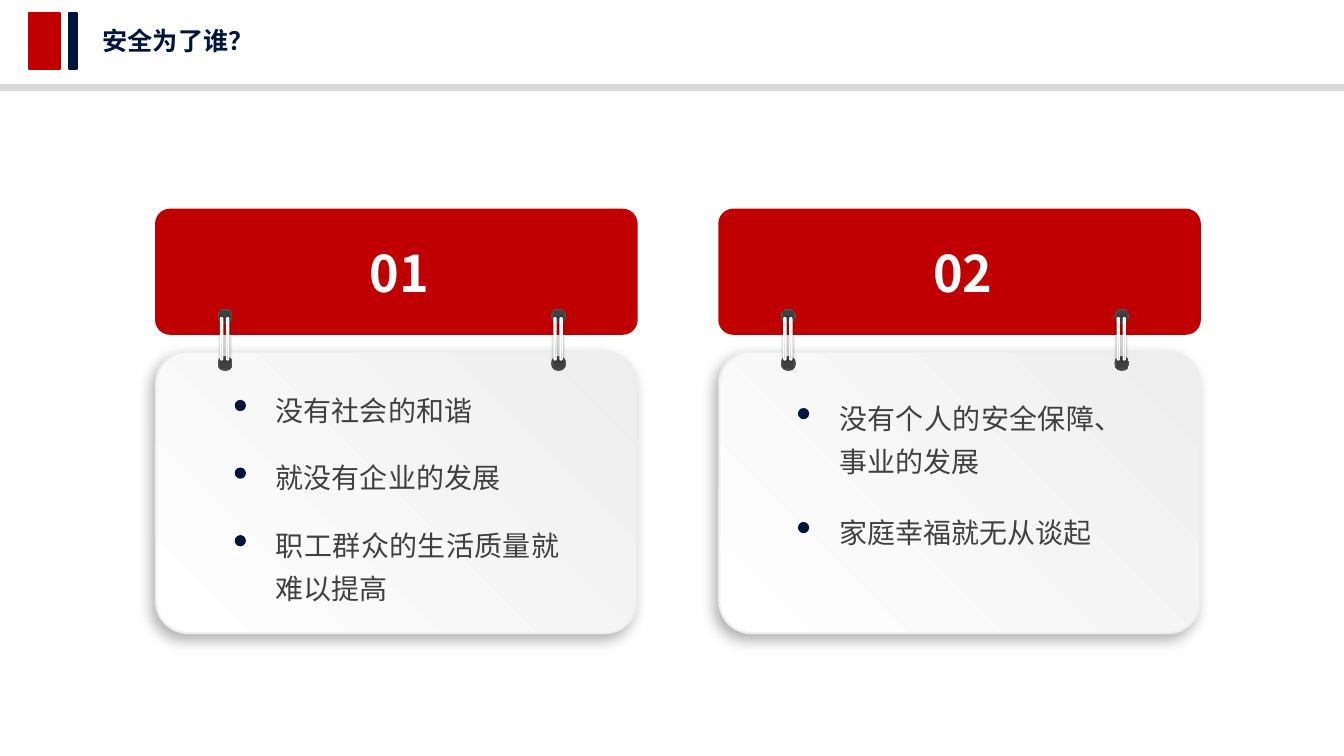
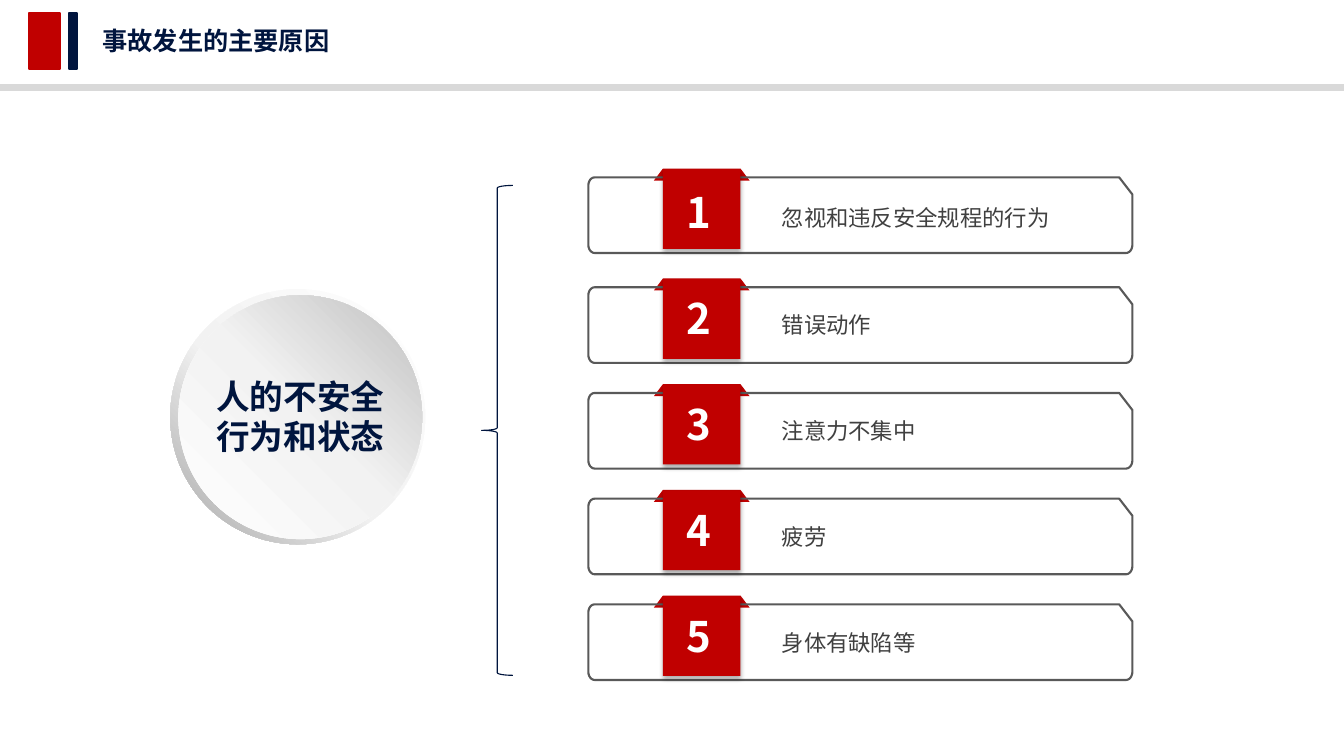
"""Build two safety training slides."""
import math

from pptx import Presentation
from pptx import util as u
from pptx.dml.color import RGBColor
from pptx.enum import shapes, text
from pptx.oxml import parse_xml
from pptx.oxml.ns import nsdecls, qn

RED = RGBColor(0xC0, 0x00, 0x00)
NAVY = RGBColor(0x00, 0x15, 0x3E)
WHITE = RGBColor(0xFF, 0xFF, 0xFF)
BAND = RGBColor(0xD9, 0xD9, 0xD9)
PALE = RGBColor(0xEE, 0xEE, 0xEE)
MIST = RGBColor(0xF2, 0xF2, 0xF2)
SILVER = RGBColor(0xBF, 0xBF, 0xBF)
STEEL = RGBColor(0xA6, 0xA6, 0xA6)
GREY = RGBColor(0x80, 0x80, 0x80)
OUTLINE = RGBColor(0x59, 0x59, 0x59)
INK = RGBColor(0x40, 0x40, 0x40)
FONT = "Noto Sans CJK SC"
WIDTH, HEIGHT = 960.5, 540

KIND = shapes.MSO_SHAPE
ALIGN = text.PP_ALIGN
PANEL_FILL = ([(0, PALE), (100, WHITE)], 135)
HOLE_FILL = ([(59, INK), (100, OUTLINE)], None)
ROD_FILL = ([(0, GREY), (23, STEEL), (52, BAND), (74, WHITE), (100, STEEL)], 270)
RIM_FILL = ([(0, WHITE), (55, MIST), (100, STEEL)], 135)
DISC_FILL = ([(0, WHITE), (51, MIST), (100, SILVER)], 315)
PANEL_SHADOW = (30, 10, 5, 135)
ROD_SHADOW = (40, 2, 0, 0)
TAG_SHADOW = (32, 3.5, 2.2, 90)

TITLE = {"size": u.Pt(18), "bold": True}
CARD_NUMBER = {"size": u.Pt(36), "bold": True}
CARD_ITEM = {"size": u.Pt(20)}
ROW_NUMBER = {"size": u.Pt(30), "bold": True}
ROW_LABEL = {"size": u.Pt(16)}
TOPIC = {"size": u.Pt(24), "bold": True}
DEFAULT_INSETS = (7.2, 3.6)
ROW_INSETS = (5, 2.9)

CARDS = [
    ("01", 111.6, 120.2, 9.4,
     [("没有社会的和谐", 1), ("就没有企业的发展", 1), ("职工群众的生活质量就难以提高", 2)]),
    ("02", 514.1, 126, 10.8,
     [("没有个人的安全保障、事业的发展", 2), ("家庭幸福就无从谈起", 1)]),
]
CAUSES = ["忽视和违反安全规程的行为", "错误动作", "注意力不集中", "疲劳", "身体有缺陷等"]


def set_values(target, values):
    """Set each named attribute of the target."""
    for name, value in values.items():
        setattr(target, name, value)


def gradient(shape, stops, angle):
    """Fill a shape with a linear gradient, or one that follows its outline."""
    marks = "".join(
        f'<a:gs pos="{at * 1000}"><a:srgbClr val="{color}"/></a:gs>' for at, color in stops)
    if angle is None:
        course = ('<a:path path="shape"><a:fillToRect l="50000" t="50000" '
                  'r="50000" b="50000"/></a:path>')
    else:
        course = f'<a:lin ang="{angle * 60000}" scaled="0"/>'
    shape.fill.background()
    properties = shape._element.spPr
    properties.replace(properties.find(qn("a:noFill")), parse_xml(
        f'<a:gradFill {nsdecls("a")} rotWithShape="1">'
        f'<a:gsLst>{marks}</a:gsLst>{course}</a:gradFill>'))


def drop_shadow(shape, opacity, blur, distance, angle):
    """Give a shape a black outer shadow."""
    shape._element.spPr.find(qn("a:effectLst")).append(parse_xml(
        f'<a:outerShdw {nsdecls("a")} blurRad="{u.Pt(blur)}" dist="{u.Pt(distance)}" '
        f'dir="{angle * 60000}" algn="ctr" rotWithShape="0"><a:srgbClr val="000000">'
        f'<a:alpha val="{opacity * 1000}"/></a:srgbClr></a:outerShdw>'))


def paint(shape, fill=None, line=None, weight=1.5, shadow=None):
    """Set the fill, line and shadow of a shape."""
    shape.shadow.inherit = False
    if fill is None:
        shape.fill.background()
    elif isinstance(fill, RGBColor):
        shape.fill.solid()
        shape.fill.fore_color.rgb = fill
    else:
        gradient(shape, *fill)
    if line is None:
        shape.line.fill.background()
    else:
        shape.line.color.rgb = line
        shape.line.width = u.Pt(weight)
    if shadow:
        drop_shadow(shape, *shadow)


def add_preset(slide, kind, box, adjust=None, **look):
    """Add a painted preset shape in a box given in points."""
    shape = slide.shapes.add_shape(kind, *map(u.Pt, box))
    if adjust is not None:
        shape.adjustments[0] = adjust
    paint(shape, **look)


def add_outline(slide, points, **look):
    """Add a painted closed outline through points."""
    corners = [(u.Pt(x), u.Pt(y)) for x, y in points]
    builder = slide.shapes.build_freeform(*corners[0])
    builder.add_line_segments(corners[1:], close=True)
    paint(builder.convert_to_shape(), **look)


def add_text(slide, box, lines, style, color, insets=DEFAULT_INSETS,
             anchor=text.MSO_ANCHOR.TOP, **layout):
    """Add a wrapped text box with one paragraph per line."""
    frame = slide.shapes.add_textbox(*map(u.Pt, box)).text_frame
    across, down = map(u.Pt, insets)
    set_values(frame, {
        "word_wrap": True, "vertical_anchor": anchor,
        "margin_left": across, "margin_right": across,
        "margin_top": down, "margin_bottom": down})
    for index, line in enumerate(lines):
        paragraph = frame.add_paragraph() if index else frame.paragraphs[0]
        set_values(paragraph, layout)
        run = paragraph.add_run()
        run.text = line
        set_values(run.font, {"name": FONT, **style})
        run.font.color.rgb = color
        run._r.get_or_add_rPr().append(
            parse_xml(f'<a:ea {nsdecls("a")} typeface="{FONT}"/>'))


def titled_slide(deck, title):
    """Add a blank slide with the shared title, blocks and band."""
    slide = deck.slides.add_slide(deck.slide_layouts[6])
    for left, width, color in ((20.9, 22.3, RED), (49, 5.8, NAVY)):
        add_preset(slide, KIND.RECTANGLE, (left, 9.4, width, 39.6), fill=color, line=color)
    add_text(slide, (66.2, 14.4, 600, 28.8), [title], TITLE, NAVY)
    add_preset(slide, KIND.RECTANGLE, (0, 60.5, WIDTH, 3.6), fill=BAND, line=BAND)
    return slide


def binder_ring(slide, left, top):
    """Draw two holes joined by two metal rods."""
    for drop in (33.8, 0):
        add_preset(slide, KIND.OVAL, (left, top + drop, 10.8, 10.8), fill=HOLE_FILL)
    for shift in (6.5, 2.2):
        add_preset(slide, KIND.ROUNDED_RECTANGLE, (left + shift, top + 6.5, 1.4, 30.2), 0.5,
                   fill=ROD_FILL, line=WHITE, weight=1, shadow=ROD_SHADOW)


def card(slide, left, top, number, first, gap, items):
    """Draw a numbered header hung over a panel of bulleted items."""
    add_preset(slide, KIND.ROUNDED_RECTANGLE, (left, top, 343.4, 88.6), 0.113,
               fill=RED, line=RED)
    add_preset(slide, KIND.ROUNDED_RECTANGLE, (left, top + 101.5, 343.4, 200.9), 0.113,
               fill=PANEL_FILL, line=PALE, shadow=PANEL_SHADOW)
    for shift in (43.9, 282.2):
        binder_ring(slide, left + shift, top + 70.6)
    add_text(slide, (left + 141.8, top + 19.4, 60.5, 51.1), [number], CARD_NUMBER, WHITE,
             anchor=text.MSO_ANCHOR.MIDDLE, alignment=ALIGN.RIGHT)
    item_top = top + first
    for item, line_count in items:
        height = 7.2 + 31.7 * line_count
        add_text(slide, (left + 78.5, item_top, 216.7, height), [item], CARD_ITEM, INK,
                 alignment=ALIGN.JUSTIFY, line_spacing=1.3)
        add_preset(slide, KIND.OVAL, (left + 56.9, item_top + 16.4, 6.5, 6.5),
                   fill=NAVY, line=NAVY)
        item_top += height + gap


def arc(x, y, start):
    """Return points of a clockwise quarter arc around a corner centre."""
    angles = [math.radians(start + 15 * step) for step in range(7)]
    return [(x + 4.5 * math.cos(a), y + 5.8 * math.sin(a)) for a in angles]


def cause_row(slide, left, top, text_top, number, label):
    """Draw a clipped frame with a numbered ribbon tag and a label."""
    right, bottom = left + 388.8, top + 54
    flap, flap_top = left + 46.8, top - 6.3
    add_outline(slide, [(flap + 6.5, flap_top), (flap + 61.9, flap_top),
                        (flap + 68.4, flap_top + 8.6), (flap, flap_top + 8.6)], fill=RED)
    add_outline(slide, [(right - 9.4, top), (right, top + 12.2),
                        *arc(right - 4.5, bottom - 5.8, 0),
                        *arc(left + 4.5, bottom - 5.8, 90),
                        *arc(left + 4.5, top + 5.8, 180)], line=OUTLINE)
    add_preset(slide, KIND.RECTANGLE, (left + 53.3, top - 5.8, 55.4, 56.9),
               fill=RED, shadow=TAG_SHADOW)
    add_text(slide, (left + 133.2, text_top, 215, 24.5), [label], ROW_LABEL, INK, ROW_INSETS)
    add_text(slide, (left + 65.5, text_top - 13.2, 38.2, 41.8), [str(number)],
             ROW_NUMBER, WHITE, ROW_INSETS)


def topic_disc(slide, left, top, lines):
    """Draw a rimmed disc carrying the topic."""
    add_preset(slide, KIND.DONUT, (left, top, 182.2, 182.2), 0.049, fill=RIM_FILL)
    add_preset(slide, KIND.OVAL, (left + 5.8, top + 4.3, 174.2, 174.2), fill=DISC_FILL)
    add_text(slide, (left - 2.9, top + 61.9, 191.5, 58.3), lines, TOPIC, NAVY, (0, 0),
             alignment=ALIGN.CENTER)


def purpose_slide(deck):
    """Build the slide on whom safety serves."""
    slide = titled_slide(deck, "安全为了谁？")
    for number, left, first, gap, items in CARDS:
        card(slide, left, 149.8, number, first, gap, items)


def causes_slide(deck):
    """Build the slide on the main causes of accidents."""
    slide = titled_slide(deck, "事故发生的主要原因")
    frame_tops = [126.7] + [205.2 + 75.5 * step for step in range(len(CAUSES) - 1)]
    for index, (top, cause) in enumerate(zip(frame_tops, CAUSES)):
        cause_row(slide, 420.5, top, 143.3 + 75.8 * index, index + 1, cause)
    topic_disc(slide, 121.7, 206.6, ["人的不安全", "行为和状态"])
    add_preset(slide, KIND.LEFT_BRACE, (344.2, 132.5, 22.3, 349.9), line=NAVY, weight=0.79)


def main():
    """Build and save the deck."""
    deck = Presentation()
    set_values(deck, {"slide_width": u.Pt(WIDTH), "slide_height": u.Pt(HEIGHT)})
    purpose_slide(deck)
    causes_slide(deck)
    deck.save("out.pptx")


if __name__ == "__main__":
    main()
